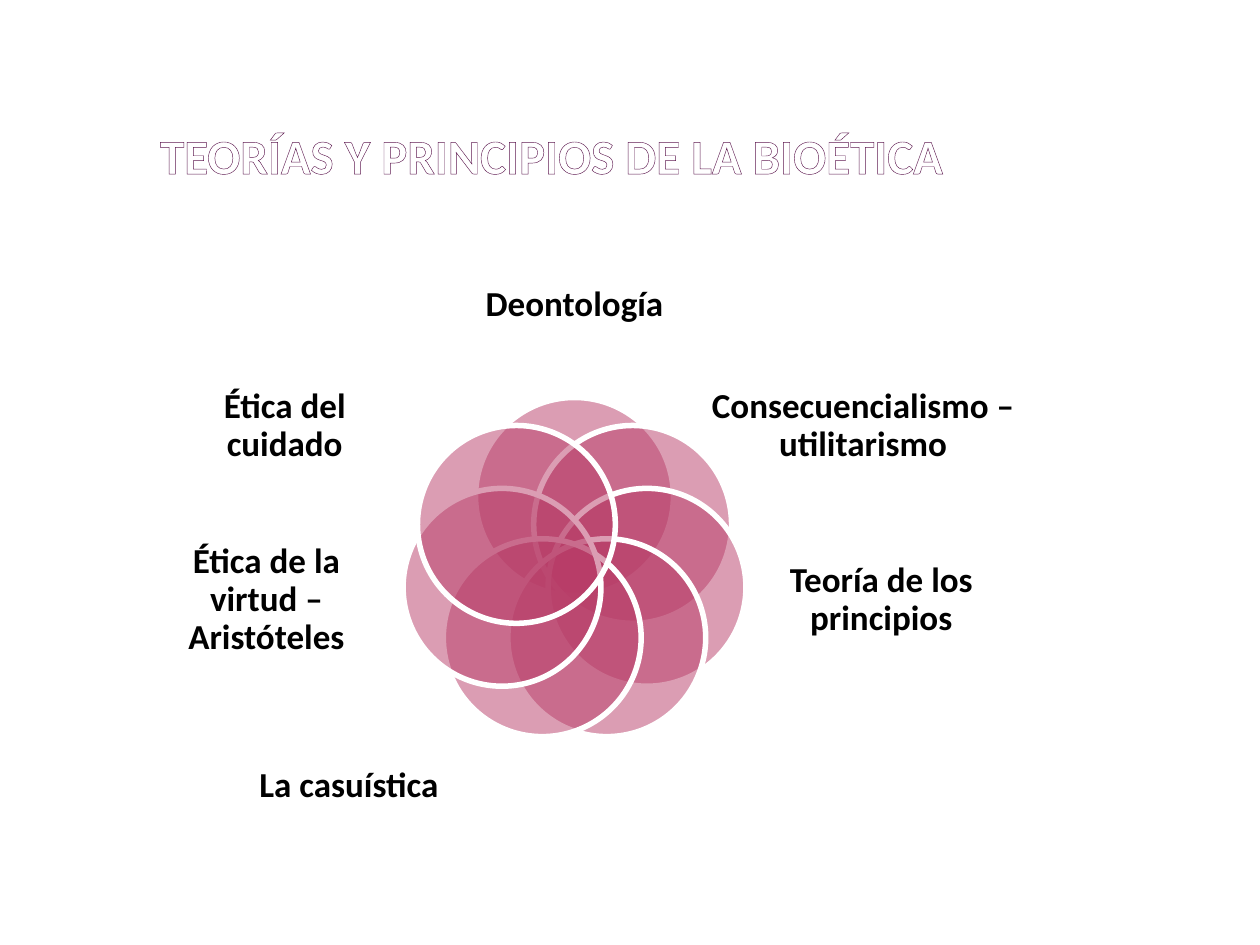
from math import cos, pi, sin

from lxml.etree import SubElement
from pptx import Presentation
from pptx.dml.color import RGBColor
from pptx.enum.shapes import MSO_SHAPE
from pptx.enum.text import MSO_ANCHOR, MSO_AUTO_SIZE, PP_ALIGN
from pptx.oxml import parse_xml
from pptx.oxml.ns import nsdecls, qn
from pptx.util import Inches, Pt

COLORS = {"petal": "B83D68", "white": "FFFFFF", "text": "000000", "outline": "5E1A50"}


def format_text(box, size, color, anchor, side_margin=0):
    frame = box.text_frame
    frame.word_wrap = True
    frame.auto_size = MSO_AUTO_SIZE.NONE
    frame.vertical_anchor = anchor
    frame.margin_left = frame.margin_right = Inches(side_margin)
    frame.margin_top = frame.margin_bottom = 0
    span = frame.paragraphs[0].runs[0]
    span.font.name = "Calibri"
    span.font.size = Pt(size)
    span.font.bold = True
    span.font.color.rgb = RGBColor.from_string(COLORS[color])
    return frame.paragraphs[0], span


deck = Presentation()
deck.slide_width, deck.slide_height = Inches(10), Inches(7.5)
page = deck.slides.add_slide(deck.slide_layouts[5])

# Title with outlined letters
title = page.shapes.title
title.left, title.top = Inches(1.22), Inches(0.44)
title.width, title.height = Inches(9), Inches(1.02)
title.text_frame.text = "TEORÍAS Y PRINCIPIOS DE LA BIOÉTICA"
para, span = format_text(title, 28, "white", MSO_ANCHOR.BOTTOM, 0.05)
para.alignment = PP_ALIGN.LEFT
outline = parse_xml(
    f'<a:ln {nsdecls("a")} w="508"><a:solidFill>'
    f'<a:srgbClr val="{COLORS["outline"]}"/></a:solidFill></a:ln>'
)
span.font._element.insert(0, outline)

# Petals clockwise from the top, each with its label (one has none)
theories = [
    ("Deontología", 3.66, 1.94, 1.8, 0.96),
    ("Consecuencialismo – utilitarismo", 5.41, 2.85, 2.88, 1.06),
    ("Teoría de los principios", 6.16, 4.2, 1.67, 1.13),
    None,
    ("La casuística", 1.87, 5.72, 1.8, 1.04),
    ("Ética de la virtud – Aristóteles", 1.28, 4.2, 1.67, 1.13),
    ("Ética del cuidado", 1.41, 2.85, 1.7, 1.06),
]
center_x, center_y, ring_radius, diameter = 4.56, 4.53, 0.59, 1.57
diagram = page.shapes.add_group_shape()

for index, label in enumerate(theories):
    angle = 2 * pi * index / len(theories)
    left = center_x + ring_radius * sin(angle) - diameter / 2
    top = center_y - ring_radius * cos(angle) - diameter / 2
    petal = diagram.shapes.add_shape(
        MSO_SHAPE.OVAL, Inches(left), Inches(top), Inches(diameter), Inches(diameter)
    )
    petal.shadow.inherit = False
    petal.fill.solid()
    petal.fill.fore_color.rgb = RGBColor.from_string(COLORS["petal"])
    fill_color = petal._element.spPr.find(qn("a:solidFill"))[0]
    SubElement(fill_color, qn("a:alpha"), val="50000")
    petal.line.color.rgb = RGBColor.from_string(COLORS["white"])
    petal.line.width = Pt(3.15)

    if label:
        text, *place = label
        box = diagram.shapes.add_textbox(*[Inches(value) for value in place])
        box.text_frame.text = text
        para, span = format_text(box, 20, "text", MSO_ANCHOR.MIDDLE)
        para.alignment = PP_ALIGN.CENTER
        para.line_spacing = 0.9

deck.save("out.pptx")
